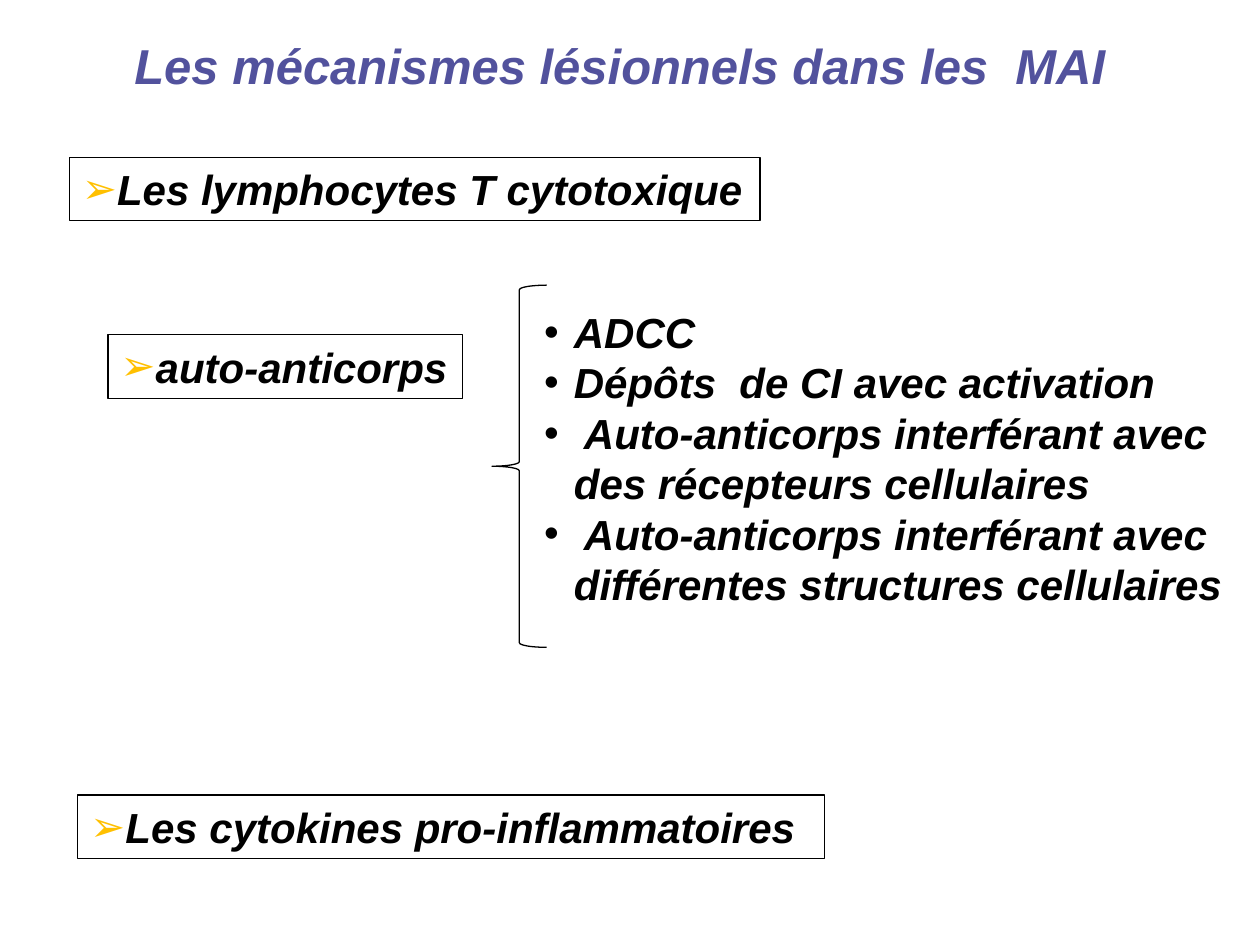
from dataclasses import dataclass

import pptx
import pptx.dml.color
import pptx.enum.shapes
import pptx.enum.text
import pptx.oxml.ns
import pptx.util
from lxml import etree
from pptx.util import Cm

BLACK, TITLE_BLUE, ARROW_GOLD = "000000", "52529D", "FFC000"


@dataclass
class Mechanism:
    text: str
    left: float
    top: float
    width: float


MECHANISMS = [
    Mechanism("Les lymphocytes T cytotoxique", 1.4, 3.17, 13.92),
    Mechanism("auto-anticorps", 2.18, 6.75, 7.14),
    Mechanism("Les cytokines pro-inflammatoires", 1.57, 16.03, 15.06),
]
ANTIBODY_EFFECTS = [
    "ADCC",
    "Dépôts  de CI avec activation",
    " Auto-anticorps interférant avec des récepteurs cellulaires",
    " Auto-anticorps interférant avec différentes structures cellulaires",
]


def rgb(value: str) -> pptx.dml.color.RGBColor:
    return pptx.dml.color.RGBColor.from_string(value)


def outline(shape) -> None:
    """Leave the shape unfilled with a thin black line."""
    shape.shadow.inherit = False
    shape.fill.background()
    shape.line.color.rgb = rgb(BLACK)
    shape.line.width = pptx.util.Pt(0.75)


def set_frame(frame, **changes) -> None:
    values = {
        "word_wrap": True,
        "auto_size": pptx.enum.text.MSO_AUTO_SIZE.NONE,
        "vertical_anchor": pptx.enum.text.MSO_ANCHOR.TOP,
        "margin_left": Cm(0.25), "margin_right": Cm(0.25),
        "margin_top": Cm(0.13), "margin_bottom": Cm(0.13),
    }
    for name, value in (values | changes).items():
        setattr(frame, name, value)


def write(paragraph, text: str, size: int = 24, color: str = BLACK) -> None:
    paragraph.alignment = pptx.enum.text.PP_ALIGN.LEFT
    run = paragraph.add_run()
    run.text = text
    values = {"name": "Arial", "size": pptx.util.Pt(size), "bold": True, "italic": True}
    for name, value in values.items():
        setattr(run.font, name, value)
    run.font.color.rgb = rgb(color)


def indent(paragraph, left: float, first: float = 0):
    properties = paragraph._p.get_or_add_pPr()
    properties.set("marL", str(Cm(left)))
    properties.set("indent", str(Cm(first)))
    return properties


def add_bullet(paragraph, mark: str, color: str, hanging: float = 0) -> None:
    properties = indent(paragraph, hanging, -hanging)
    qn = pptx.oxml.ns.qn
    bullet_color = etree.SubElement(properties, qn("a:buClr"))
    etree.SubElement(bullet_color, qn("a:srgbClr"), val=color)
    etree.SubElement(properties, qn("a:buFont"), typeface="Arial")
    etree.SubElement(properties, qn("a:buChar"), char=mark)


def add_title(slide) -> None:
    title = slide.shapes.add_textbox(Cm(1.09), Cm(0.58), Cm(23.72), Cm(1.45))
    set_frame(title.text_frame)
    paragraph = title.text_frame.paragraphs[0]
    write(paragraph, "Les mécanismes lésionnels dans les  MAI", 28, TITLE_BLUE)
    indent(paragraph, 1.37)


def add_mechanism(slide, mechanism: Mechanism) -> None:
    box = slide.shapes.add_shape(
        pptx.enum.shapes.MSO_SHAPE.RECTANGLE,
        Cm(mechanism.left), Cm(mechanism.top), Cm(mechanism.width), Cm(1.28))
    outline(box)
    set_frame(box.text_frame, margin_right=0)
    paragraph = box.text_frame.paragraphs[0]
    write(paragraph, mechanism.text)
    add_bullet(paragraph, "➢", ARROW_GOLD)


def add_effects(slide) -> None:
    effects = slide.shapes.add_textbox(Cm(10.72), Cm(5.03), Cm(15.29), Cm(8.46))
    frame = effects.text_frame
    set_frame(frame, margin_top=Cm(1.15))
    for index, text in enumerate(ANTIBODY_EFFECTS):
        paragraph = frame.add_paragraph() if index else frame.paragraphs[0]
        write(paragraph, text)
        add_bullet(paragraph, "•", BLACK, 0.6)


def main() -> None:
    deck = pptx.Presentation()
    deck.slide_width, deck.slide_height = Cm(25.4), Cm(19.05)
    slide = deck.slides.add_slide(deck.slide_layouts[6])
    add_title(slide)
    for mechanism in MECHANISMS:
        add_mechanism(slide, mechanism)
    add_effects(slide)
    brace = slide.shapes.add_shape(
        pptx.enum.shapes.MSO_SHAPE.LEFT_BRACE, Cm(9.92), Cm(5.75), Cm(1.1), Cm(7.3))
    outline(brace)
    deck.save("out.pptx")


if __name__ == "__main__":
    main()
